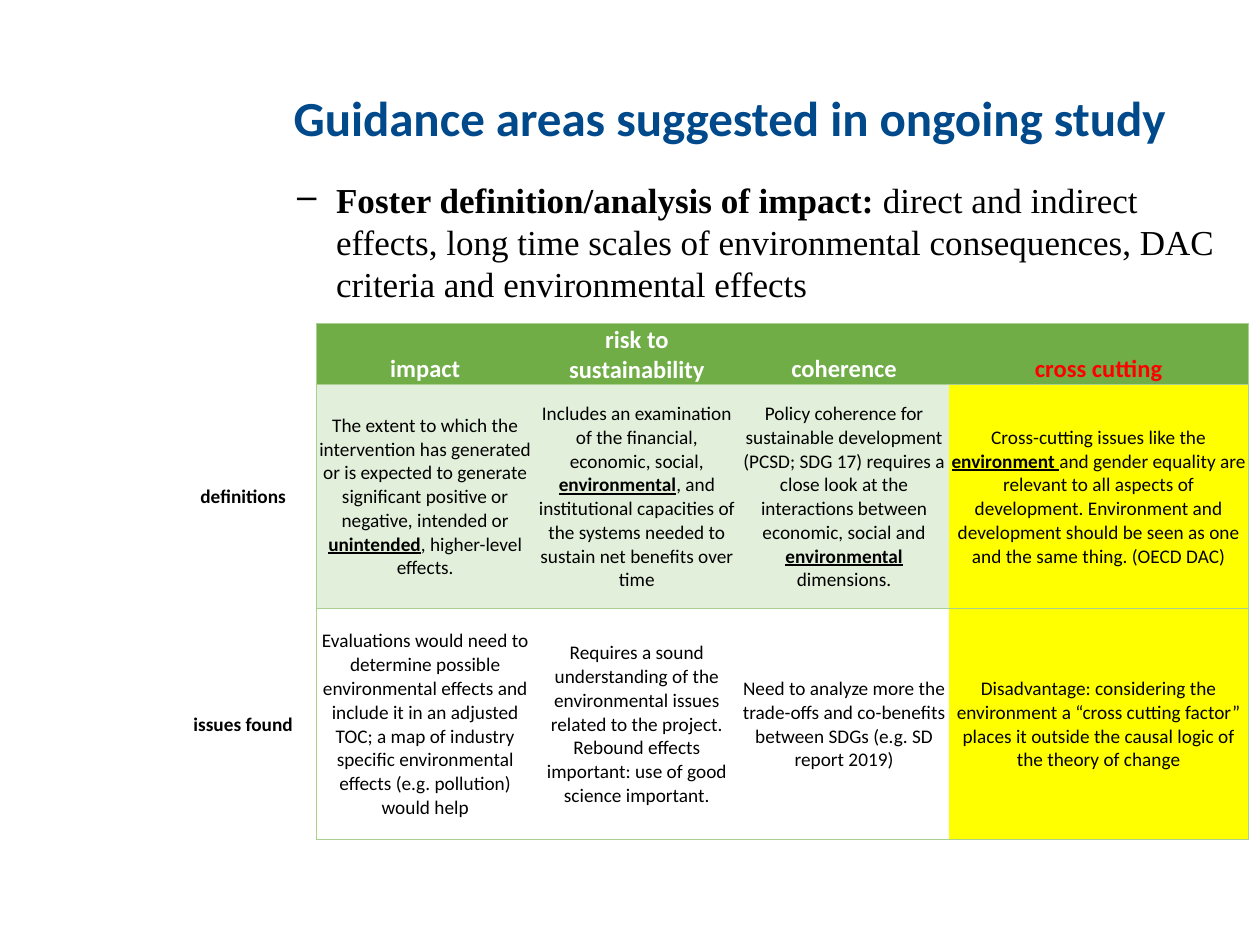
from lxml import etree
from pptx import Presentation
from pptx.dml.color import RGBColor
from pptx.enum.text import MSO_ANCHOR, PP_ALIGN
from pptx.oxml.ns import qn
from pptx.util import Inches, Pt

CENTER = PP_ALIGN.CENTER
MIDDLE, BOTTOM = MSO_ANCHOR.MIDDLE, MSO_ANCHOR.BOTTOM
GREEN, PALE, YELLOW, EDGE = "70AD47", "E2EFDA", "FFFF00", "A9D08E"
BLACK, WHITE, RED, BLUE = "000000", "FFFFFF", "FF0000", "00498B"

COLUMN_WIDTHS = [1.16, 1.73, 1.63, 1.66, 2.38]
ROW_HEIGHTS = [0.48, 1.78, 1.83]
ROW_FILLS = [GREEN, PALE, None]
ROWS = [
    ["", "impact", "risk to sustainability", "coherence", "cross cutting"],
    [
        "definitions",
        ("The extent to which the intervention has generated or is expected to generate "
         "significant positive or negative, intended or ", "unintended", ", higher-level effects."),
        ("Includes an examination of the financial, economic, social, ", "environmental",
         ", and institutional capacities of the systems needed to sustain net benefits over time"),
        ("Policy coherence for sustainable development (PCSD; SDG 17) requires a close look at "
         "the interactions between economic, social and ", "environmental", " dimensions."),
        ("Cross-cutting issues like the ", "environment ",
         "and gender equality are relevant to all aspects of development. Environment and "
         "development should be seen as one and the same thing. (OECD DAC)"),
    ],
    [
        "issues found",
        "Evaluations would need to determine possible environmental effects and include it in an "
        "adjusted TOC; a map of industry specific environmental effects (e.g. pollution) would help",
        "Requires a sound understanding of the environmental issues related to the project. "
        "Rebound effects important: use of good science important.",
        "Need to analyze more the trade-offs and co-benefits between SDGs (e.g. SD report 2019)",
        "Disadvantage: considering the environment a “cross cutting factor” places it outside "
        "the causal logic of the theory of change",
    ],
]


def rgb(value):
    """Turn a hex string into a colour."""
    return RGBColor.from_string(value)


def set_font(font, name, size, color, bold=None):
    """Set the main properties of a font."""
    font.name, font.size, font.bold = name, Pt(size), bold
    font.color.rgb = rgb(color)


def add_text_box(slide, x, y, w, h):
    """Add a wrapping text box and return its text frame."""
    tf = slide.shapes.add_textbox(Inches(x), Inches(y), Inches(w), Inches(h)).text_frame
    tf.word_wrap = True
    return tf


def add_title(slide, x, y, w, h):
    """Add the slide title."""
    tf = add_text_box(slide, x, y, w, h)
    tf.vertical_anchor = MIDDLE
    p = tf.paragraphs[0]
    p.text, p.alignment = "Guidance areas suggested in ongoing study", CENTER
    set_font(p.font, "Calibri", 28, BLUE, True)


def add_body(slide, x, y, w, h):
    """Add the dashed statement above the table."""
    p = add_text_box(slide, x, y, w, h).paragraphs[0]
    p_pr = p._p.get_or_add_pPr()
    p_pr.set("marL", str(Inches(0.81)))
    p_pr.set("indent", str(Inches(-0.31)))
    etree.SubElement(p_pr, qn("a:buChar"), char="–")
    set_font(p.font, "Times New Roman", 20, BLACK)
    r = p.add_run()
    r.text, r.font.bold = "Foster definition/analysis of impact: ", True
    p.add_run().text = ("direct and indirect effects, long time scales of environmental "
                        "consequences, DAC criteria and environmental effects")


def set_borders(cell, sides):
    """Draw the given sides of a cell and hide the others."""
    tc_pr = cell._tc.get_or_add_tcPr()
    for i, side in enumerate("LRTB"):
        ln = etree.Element(qn(f"a:ln{side}"), w=str(Pt(0.5)))
        if side in sides:
            fill = etree.SubElement(ln, qn("a:solidFill"))
            etree.SubElement(fill, qn("a:srgbClr"), val=EDGE)
        else:
            etree.SubElement(ln, qn("a:noFill"))
        tc_pr.insert(i, ln)


def fill_cell(cell, row, col, content):
    """Write and style one table cell."""
    header, label, last = row == 0, col == 0, col == len(COLUMN_WIDTHS) - 1
    cell.margin_left = cell.margin_right = cell.margin_top = Inches(0.01)
    cell.margin_bottom = 0
    cell.vertical_anchor = BOTTOM if header else MIDDLE
    fill = None if label else YELLOW if last and not header else ROW_FILLS[row]
    if fill:
        cell.fill.solid()
        cell.fill.fore_color.rgb = rgb(fill)
    else:
        cell.fill.background()
    set_borders(cell, "R" if label else "TB" + "L" * (col == 1) + "R" * last)
    p = cell.text_frame.paragraphs[0]
    p.alignment = CENTER
    color = (RED if last else WHITE) if header else BLACK
    set_font(p.font, "Calibri", 14 if header else 11, color, header or label)
    if isinstance(content, str):
        p.text = content
        return
    before, key, after = content
    p.add_run().text = before
    r = p.add_run()
    r.text, r.font.bold, r.font.underline = key, True, True
    p.add_run().text = after


def add_criteria_table(slide, x, y):
    """Add the table of criteria, definitions and issues."""
    table = slide.shapes.add_table(
        len(ROW_HEIGHTS), len(COLUMN_WIDTHS), Inches(x), Inches(y),
        Inches(sum(COLUMN_WIDTHS)), Inches(sum(ROW_HEIGHTS))).table
    table.first_row = table.horz_banding = False
    for column, width in zip(table.columns, COLUMN_WIDTHS):
        column.width = Inches(width)
    for i, (height, contents) in enumerate(zip(ROW_HEIGHTS, ROWS)):
        table.rows[i].height = Inches(height)
        for j, content in enumerate(contents):
            fill_cell(table.cell(i, j), i, j, content)


def main():
    """Build and save the slide."""
    prs = Presentation()
    prs.slide_width, prs.slide_height = Inches(10), Inches(7.5)
    slide = prs.slides.add_slide(prs.slide_layouts[6])
    add_title(slide, 1.76, 0.3, 8.06, 1.25)
    add_body(slide, 1.76, 1.37, 8.06, 5.14)
    add_criteria_table(slide, 1.35, 2.57)
    prs.save("out.pptx")


if __name__ == "__main__":
    main()
